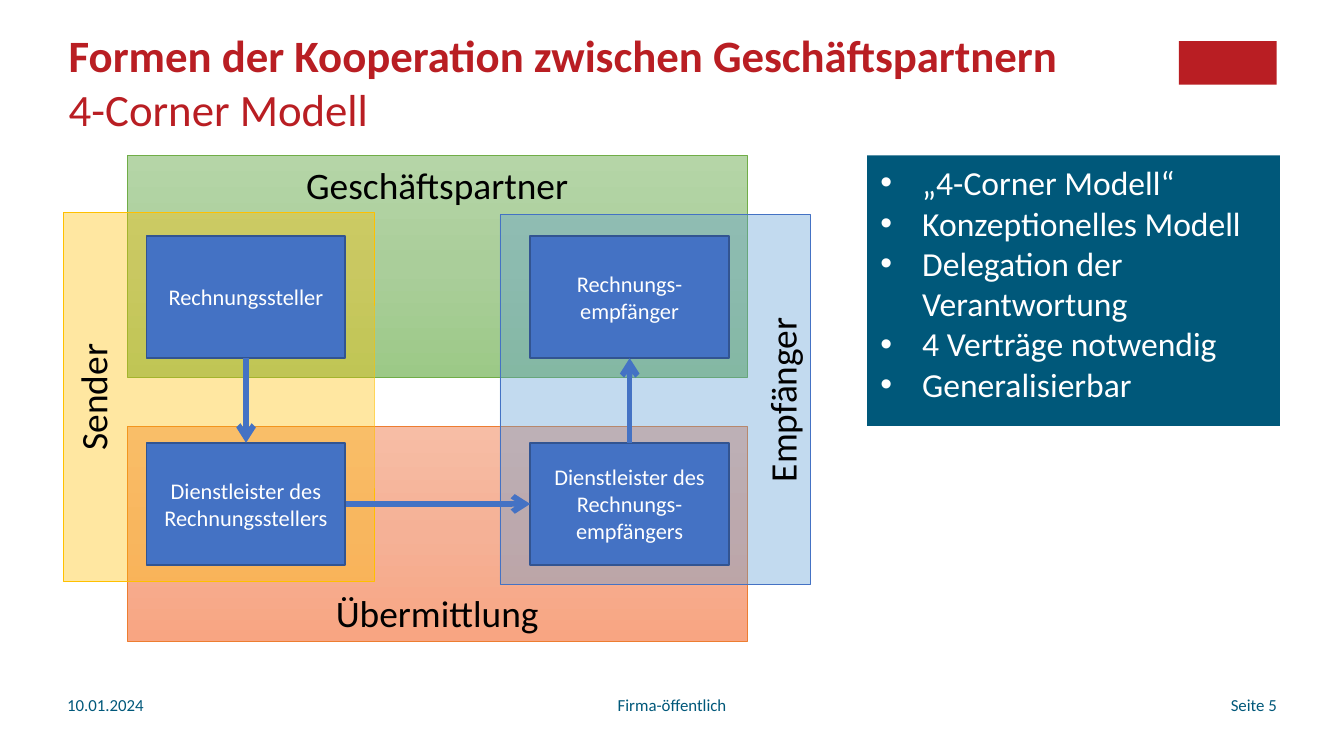
from copy import deepcopy

from lxml import etree
from pptx import Presentation
from pptx.dml.color import RGBColor
from pptx.enum.shapes import MSO_CONNECTOR, MSO_SHAPE
from pptx.enum.text import MSO_ANCHOR, PP_ALIGN
from pptx.oxml.ns import qn
from pptx.util import Cm, Pt

RECT, STRAIGHT = MSO_SHAPE.RECTANGLE, MSO_CONNECTOR.STRAIGHT
TOP, MIDDLE, BOTTOM = MSO_ANCHOR.TOP, MSO_ANCHOR.MIDDLE, MSO_ANCHOR.BOTTOM
LEFT, CENTER, RIGHT = PP_ALIGN.LEFT, PP_ALIGN.CENTER, PP_ALIGN.RIGHT
SITE_TOP, SITE_LEFT, SITE_BOTTOM, SITE_RIGHT = range(4)

RED, PETROL, BLUE, WHITE, BLACK = "B91E23", "00587A", "4472C4", "FFFFFF", "000000"
GREENS = ("B5D5A7", "AACE9A", "9CC987")
ORANGES = ("F7BDA5", "F5B196", "F8A582")


def rgb(value):
    return RGBColor.from_string(value)


def format_run(r, size, color, bold=False):
    for name, value in {"name": "Calibri", "size": Pt(size), "bold": bold}.items():
        setattr(r.font, name, value)
    r.font.color.rgb = rgb(color)


def format_frame(tf, anchor, **margins):
    values = {"word_wrap": True, "vertical_anchor": anchor, **margins}
    for name, value in values.items():
        setattr(tf, name, value)


def write(p, text, size, color, align=LEFT, bold=False):
    p.alignment = align
    r = p.add_run()
    r.text = text
    format_run(r, size, color, bold)


def add_rect(s, box, fill=None, line=None, width=0.5):
    sp = s.shapes.add_shape(RECT, *(Cm(v) for v in box))
    sp.shadow.inherit = False
    if fill:
        sp.fill.solid()
        sp.fill.fore_color.rgb = rgb(fill)
    if line:
        sp.line.color.rgb = rgb(line)
        sp.line.width = Pt(width)
    else:
        sp.line.fill.background()
    return sp


def fill_gradient(sp, colors):
    """Fill from top to bottom with three evenly spaced colours."""
    sp.fill.gradient()
    sp.fill.gradient_angle = 270
    stops = next(sp._element.spPr.iter(qn("a:gsLst")))
    stops.insert(1, deepcopy(stops[0]))
    for i, (stop, color) in enumerate(zip(sp.fill.gradient_stops, colors)):
        stop.position = i / 2
        stop.color.rgb = rgb(color)


def add_layer(s, box, text, anchor, colors, line):
    sp = add_rect(s, box, line=line)
    fill_gradient(sp, colors)
    format_frame(sp.text_frame, anchor)
    write(sp.text_frame.paragraphs[0], text, 20, BLACK, CENTER)


def add_side(s, box, text, anchor, fill, line):
    """Translucent panel turned a quarter left; box is its visible area."""
    x, y, w, h = box
    sp = add_rect(s, (x + (w - h) / 2, y + (h - w) / 2, h, w), fill, line)
    sp.rotation = 270
    color = sp._element.spPr.find(qn("a:solidFill"))[0]
    etree.SubElement(color, qn("a:alpha"), val="37000")
    format_frame(sp.text_frame, anchor)
    write(sp.text_frame.paragraphs[0], text, 20, BLACK, CENTER)


def add_corner(s, box, text):
    sp = add_rect(s, box, BLUE, "325491", 1)
    format_frame(sp.text_frame, MIDDLE)
    write(sp.text_frame.paragraphs[0], text, 12, WHITE, CENTER)
    return sp


def add_arrow(s, start, start_site, end, end_site):
    c = s.shapes.add_connector(STRAIGHT, 0, 0, 0, 0)
    c.begin_connect(start, start_site)
    c.end_connect(end, end_site)
    c.line.color.rgb = rgb(BLUE)
    c.line.width = Pt(3)
    etree.SubElement(c.line._get_or_add_ln(), qn("a:tailEnd"), type="arrow")
    etree.SubElement(c._element.spPr, qn("a:effectLst"))


def add_header(s, box):
    x, y, w, h = box
    tf = s.shapes.add_textbox(Cm(x), Cm(y), Cm(21), Cm(h)).text_frame
    format_frame(tf, TOP, margin_left=0, margin_top=0, margin_right=0, margin_bottom=0)
    p = tf.paragraphs[0]
    write(p, "Formen der Kooperation zwischen Geschäftspartnern", 24, RED, bold=True)
    p.add_line_break()
    write(p, "4-Corner Modell", 24, RED)
    block_w = 1.85
    add_rect(s, (x + w - block_w, y + 0.25, block_w, 0.82), RED)


def add_diagram(s, box):
    x, y, w, h = box
    layer_x, layer_w = x + 1.21, 11.71
    add_layer(s, (layer_x, y, layer_w, 4.19), "Geschäftspartner", TOP, GREENS, "70AD47")
    add_layer(s, (layer_x, y + h - 4.06, layer_w, 4.06), "Übermittlung", BOTTOM,
              ORANGES, "ED7D31")

    side_w, side_h = 5.87, 6.99
    add_side(s, (x, y + 1.07, side_w, side_h), "Sender", TOP, "FFC000", "FFC000")
    add_side(s, (x + w - side_w, y + 1.12, side_w, side_h), "Empfänger", BOTTOM,
             "5B9BD5", BLUE)

    labels = (("Rechnungssteller", "Rechnungs-empfänger"),
              ("Dienstleister des Rechnungsstellers",
               "Dienstleister des Rechnungs-empfängers"))
    (sender, receiver), (sender_agent, receiver_agent) = [
        [add_corner(s, (x + 1.57 + col * 7.25, y + 1.52 + row * 3.91, 3.76, 2.31), text)
         for col, text in enumerate(texts)]
        for row, texts in enumerate(labels)]
    add_arrow(s, sender, SITE_BOTTOM, sender_agent, SITE_TOP)
    add_arrow(s, sender_agent, SITE_RIGHT, receiver_agent, SITE_LEFT)
    add_arrow(s, receiver_agent, SITE_TOP, receiver, SITE_BOTTOM)


def add_key_points(s, box):
    tf = add_rect(s, box, PETROL).text_frame
    format_frame(tf, TOP)
    points = ("„4-Corner Modell“", "Konzeptionelles Modell",
              "Delegation der Verantwortung", "4 Verträge notwendig", "Generalisierbar")
    for i, text in enumerate(points):
        p = tf.add_paragraph() if i else tf.paragraphs[0]
        pPr = p._p.get_or_add_pPr()
        pPr.set("marL", str(Cm(0.79)))
        pPr.set("indent", str(-Cm(0.79)))
        etree.SubElement(pPr, qn("a:buFont"), typeface="Arial")
        etree.SubElement(pPr, qn("a:buChar"), char="•")
        write(p, text, 18, WHITE)


def add_footer(s, box):
    x, y, w, h = box
    side_w, mid_w = 5.92, 8.05
    items = (
        ("10.01.2024", x, side_w, LEFT, {"margin_left": 0}),
        ("Firma-öffentlich", x + (w - mid_w) / 2, mid_w, CENTER, {}),
        ("Seite 5", x + w - side_w, side_w, RIGHT, {"margin_right": 0}),
    )
    for text, left, width, align, margins in items:
        tf = s.shapes.add_textbox(Cm(left), Cm(y), Cm(width), Cm(h)).text_frame
        format_frame(tf, TOP, **margins)
        write(tf.paragraphs[0], text, 9, PETROL, align)


def main():
    prs = Presentation()
    prs.slide_width, prs.slide_height = Cm(25.4), Cm(14.29)
    s = prs.slides.add_slide(prs.slide_layouts[6])
    add_header(s, (1.3, 0.53, 22.83, 2))
    add_diagram(s, (1.2, 2.94, 14.12, 9.18))
    add_key_points(s, (16.39, 2.94, 7.8, 5.11))
    add_footer(s, (1.27, 13, 22.86, 0.99))
    prs.save("out.pptx")


if __name__ == "__main__":
    main()
